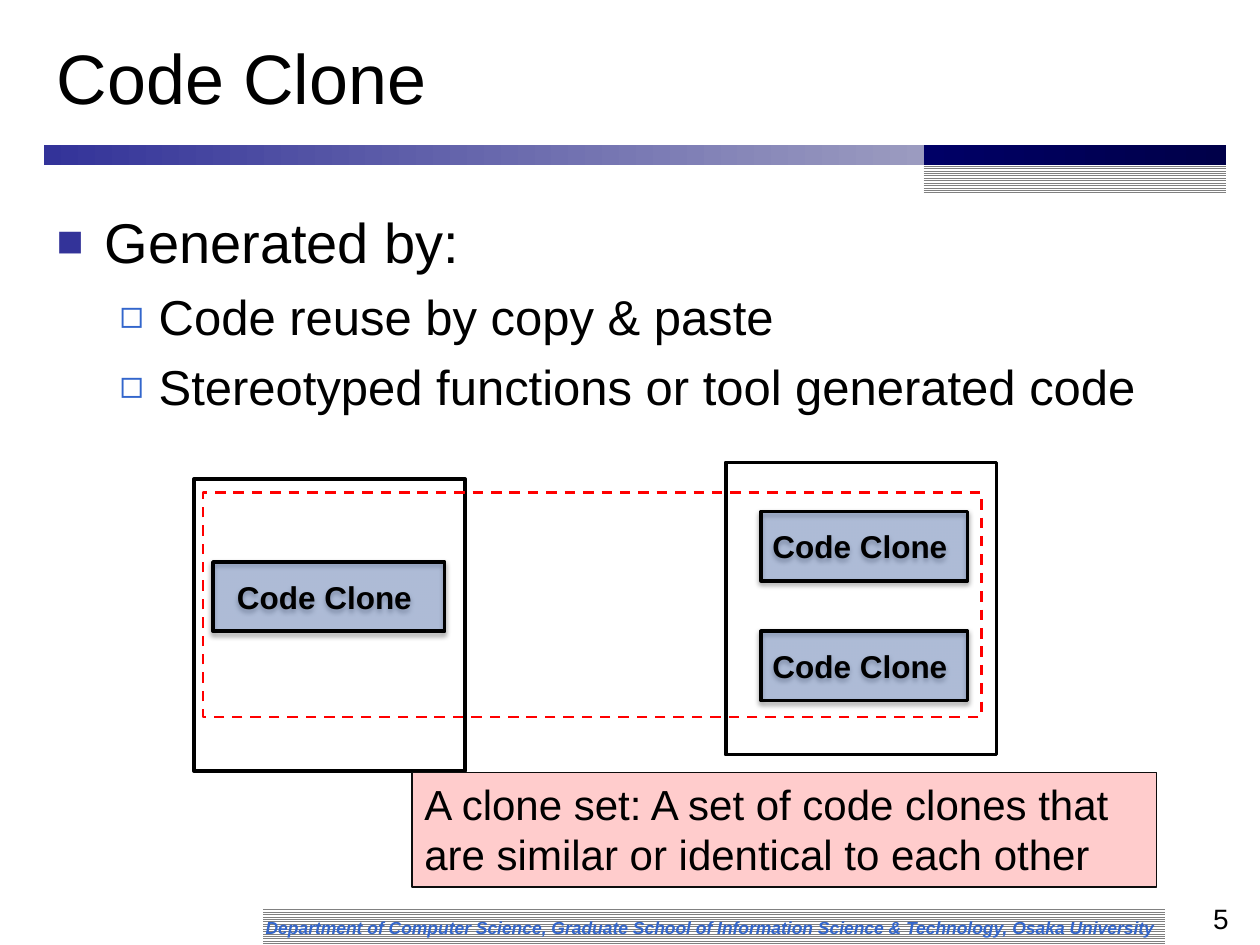
from lxml import etree
from pptx import Presentation
from pptx.dml.color import RGBColor
from pptx.enum.dml import MSO_LINE, MSO_PATTERN
from pptx.enum.shapes import MSO_SHAPE
from pptx.enum.text import MSO_ANCHOR, MSO_AUTO_SIZE, PP_ALIGN
from pptx.oxml.ns import qn
from pptx.util import Inches, Pt

RECT = MSO_SHAPE.RECTANGLE
STRIPES = MSO_PATTERN.LIGHT_HORIZONTAL
DASH = MSO_LINE.DASH
MIDDLE, TOP = MSO_ANCHOR.MIDDLE, MSO_ANCHOR.TOP
LEFT, CENTER, RIGHT = PP_ALIGN.LEFT, PP_ALIGN.CENTER, PP_ALIGN.RIGHT

BLACK = RGBColor(0x00, 0x00, 0x00)
WHITE = RGBColor(0xFF, 0xFF, 0xFF)
GRAY = RGBColor(0x80, 0x80, 0x80)
INDIGO = RGBColor(0x33, 0x33, 0x99)
LAVENDER = RGBColor(0x9B, 0x9B, 0xC0)
NAVY = RGBColor(0x00, 0x00, 0x66)
DARK_NAVY = RGBColor(0x00, 0x00, 0x49)
BLUE = RGBColor(0x33, 0x66, 0xCC)
CLONE_BLUE = RGBColor(0x2D, 0x5C, 0xB9)
PINK = RGBColor(0xFF, 0xCC, 0xCC)
NEAR_BLACK = RGBColor(0x0D, 0x0D, 0x0D)
RED = RGBColor(0xFF, 0x00, 0x00)

prs = Presentation()
prs.slide_width, prs.slide_height = Inches(10), Inches(7.5)
COL, ROW = prs.slide_width / 100, prs.slide_height / 75
s = prs.slides.add_slide(prs.slide_layouts[1])


def add_box(x, y, w, h, line=None, width=2):
    """Add an unfilled rectangle placed in grid columns and rows."""
    sp = s.shapes.add_shape(RECT, *map(int, (x * COL, y * ROW, w * COL, h * ROW)))
    sp.shadow.inherit = False
    sp.fill.background()
    if line is None:
        sp.line.fill.background()
    else:
        sp.line.color.rgb = line
        sp.line.width = Pt(width)
    return sp


def write(sp, text, size, color=BLACK, bold=False, italic=False,
          align=LEFT, anchor=TOP, wrap=True):
    tf = sp.text_frame
    tf.word_wrap = wrap
    tf.vertical_anchor = anchor
    p = tf.paragraphs[0]
    p.alignment = align
    r = p.add_run()
    r.text = text
    r.font.name, r.font.size = "Arial", Pt(size)
    r.font.bold, r.font.italic = bold, italic
    r.font.color.rgb = color


# Striped bands and gradient bars
for place in ((20.9, 72, 71.6, 3), (73.3, 12.4, 24, 3)):
    fill = add_box(*place).fill
    fill.patterned()
    fill.pattern = STRIPES
    fill.fore_color.rgb, fill.back_color.rgb = GRAY, WHITE

for x, w, colors in ((3.5, 69.8, (INDIGO, LAVENDER)),
                     (73.3, 24, (NAVY, DARK_NAVY))):
    fill = add_box(x, 11.5, w, 1.6).fill
    fill.gradient()
    fill.gradient_angle = 0
    for stop, color in zip(fill.gradient_stops, colors):
        stop.color.rgb = color

write(add_box(20.1, 72.3, 73.2, 2.7),
      "Department of Computer Science, Graduate School of Information Science"
      " & Technology, Osaka University",
      10, BLUE, bold=True, italic=True, anchor=MIDDLE)

# Title and bullet list
title, body = s.shapes.title, s.placeholders[1]
for sp, (x, y, w, h) in ((title, (3.5, 1.3, 93.8, 9.5)),
                         (body, (3.5, 15.5, 93.7, 52.8))):
    sp.left, sp.top = int(x * COL), int(y * ROW)
    sp.width, sp.height = int(w * COL), int(h * ROW)
    sp.text_frame.auto_size = MSO_AUTO_SIZE.NONE
write(title, "Code Clone", 40, anchor=MIDDLE)

LEVELS = (  # indent, hanging, bullet, bullet colour, text size
    (0.38, 0.38, "■", INDIGO, 32),
    (0.81, 0.31, "◻", BLUE, 28),
)
items = (
    (0, "Generated by:"),
    (1, "Code reuse by copy & paste"),
    (1, "Stereotyped functions or tool generated code"),
)
tf = body.text_frame
tf.margin_top = Inches(0.1)
for i, (level, text) in enumerate(items):
    indent, hanging, bullet, color, size = LEVELS[level]
    p = tf.add_paragraph() if i else tf.paragraphs[0]
    p.level = level
    p.space_before = Pt(6.5 if i else 0)
    pPr = p._p.get_or_add_pPr()
    pPr.set("marL", str(Inches(indent)))
    pPr.set("indent", str(-Inches(hanging)))
    buClr = etree.SubElement(pPr, qn("a:buClr"))
    etree.SubElement(buClr, qn("a:srgbClr"), val=str(color))
    etree.SubElement(pPr, qn("a:buSzPct"), val="80000")
    etree.SubElement(pPr, qn("a:buFont"), typeface="Arial")
    etree.SubElement(pPr, qn("a:buChar"), char=bullet)
    r = p.add_run()
    r.text = text
    r.font.name, r.font.size = "Arial", Pt(size)
    r.font.color.rgb = BLACK

write(add_box(92.5, 71.1, 6, 3), "5", 16, align=RIGHT)

# Source files and the clones inside them
for x, y in ((15.4, 38), (57.6, 36.7)):
    add_box(x, y, 21.5, 23.2, BLACK)

for x, y, w in ((16.9, 44.6, 18.4), (60.4, 40.6, 16.4), (60.4, 50.1, 16.4)):
    sp = add_box(x, y, w, 5.5, BLACK)
    sp.fill.solid()
    sp.fill.fore_color.rgb = CLONE_BLUE
    spPr = sp._element.spPr
    fill_color = spPr.find(qn("a:solidFill")).find(qn("a:srgbClr"))
    etree.SubElement(fill_color, qn("a:alpha"), val="29000")
    shadow = etree.SubElement(spPr.find(qn("a:effectLst")), qn("a:outerShdw"),
                              blurRad=str(Pt(3.1)), dist=str(Pt(1.6)),
                              dir="5400000", rotWithShape="0")
    shadow_color = etree.SubElement(shadow, qn("a:srgbClr"), val=str(BLACK))
    etree.SubElement(shadow_color, qn("a:alpha"), val="38000")
    write(sp, "Code Clone ", 18, bold=True, align=CENTER, anchor=MIDDLE, wrap=False)

# Clone set: explanation and dashed outline
sp = add_box(32.7, 61.3, 59.1, 9.1, NEAR_BLACK, 0.75)
sp.fill.solid()
sp.fill.fore_color.rgb = PINK
write(sp, "A clone set: A set of code clones that are similar or identical"
      " to each other", 24)

add_box(16.1, 39.1, 61.8, 17.8, RED, 1.5).line.dash_style = DASH

prs.save("out.pptx")
